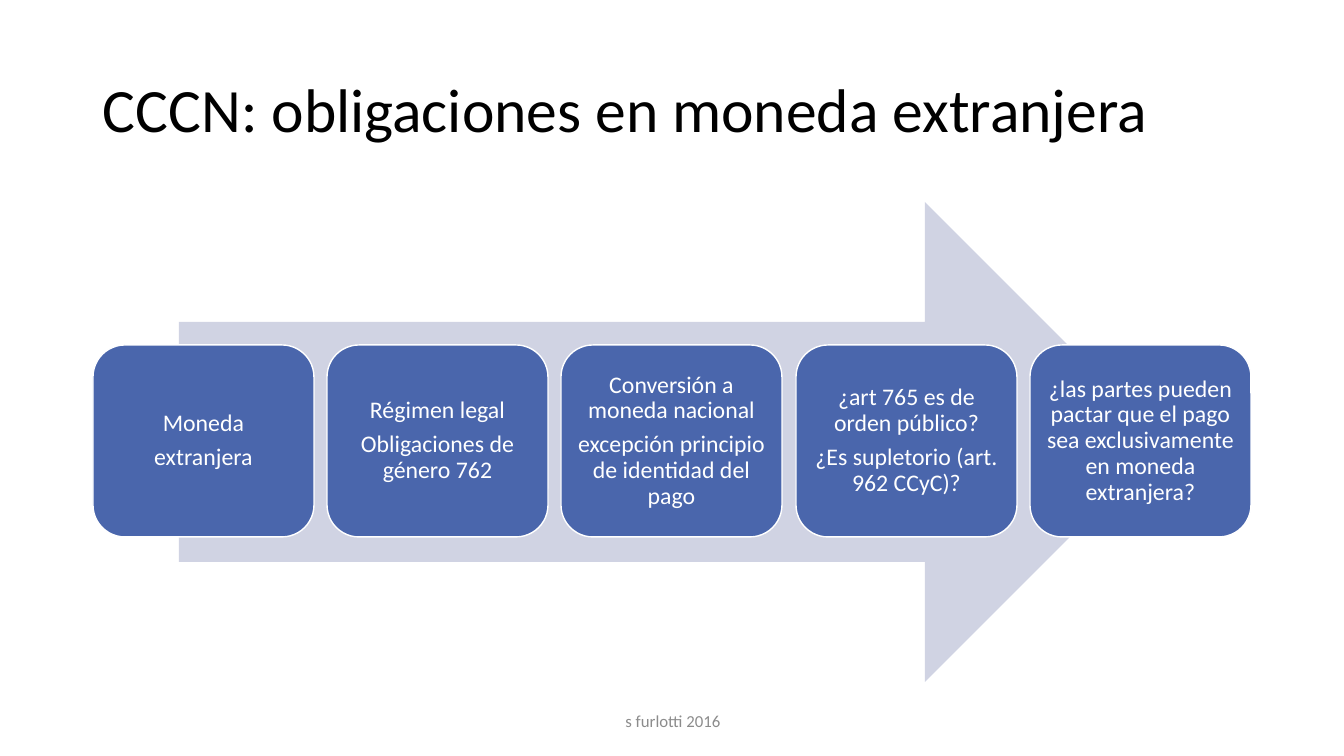
from dataclasses import dataclass

from pptx import Presentation
from pptx.dml.color import RGBColor
from pptx.enum.shapes import MSO_SHAPE as Preset
from pptx.enum.text import MSO_ANCHOR as Anchor, PP_ALIGN as Align
from pptx.shapes.autoshape import Shape
from pptx.slide import Slide
from pptx.util import Pt

EMU_PER_PX = 914400 / 100.8
FONT = "Calibri"
WHITE, BLACK, GREY = "FFFFFF", "000000", "8C8C8C"
BLUE, PALE_BLUE = "4A66AC", "D0D3E3"


@dataclass(frozen=True)
class Area:
    left: int
    top: int
    width: int
    height: int

    def emu(self) -> list[int]:
        return [px(n) for n in (self.left, self.top, self.width, self.height)]


@dataclass(frozen=True)
class TextStyle:
    size: int
    color: str
    align: Align = Align.CENTER
    line_spacing: float = 0.9
    space_after: int = 0
    inset_x: int = 10
    inset_y: int = 5


TITLE_AREA = Area(93, 40, 1159, 146)
ARROW_AREA = Area(179, 202, 986, 480)
STEPS_AREA = Area(93, 345, 1158, 192)
FOOTER_AREA = Area(446, 701, 454, 40)
STEP_WIDTH = 221

TITLE_STYLE = TextStyle(44, BLACK, align=Align.LEFT)
STEP_STYLE = TextStyle(17, WHITE, space_after=6, inset_x=7, inset_y=7)
FOOTER_STYLE = TextStyle(12, GREY, line_spacing=1.0)

STEPS = [
    ["Moneda", "extranjera"],
    ["Régimen legal", "Obligaciones de género 762"],
    ["Conversión a moneda nacional", "excepción principio de identidad del pago"],
    ["¿art 765 es de orden público?", "¿Es supletorio (art. 962 CCyC)?"],
    ["¿las partes pueden pactar que el pago sea exclusivamente en moneda extranjera?"],
]


def px(length: int) -> int:
    return round(length * EMU_PER_PX)


def rgb(color: str) -> RGBColor:
    return RGBColor.from_string(color)


def set_values(target: object, values: dict) -> None:
    for name, value in values.items():
        setattr(target, name, value)


def write(box: Shape, lines: list[str], style: TextStyle) -> None:
    """Fill the box with one paragraph per line."""
    frame = box.text_frame
    set_values(frame, {
        "word_wrap": True,
        "vertical_anchor": Anchor.MIDDLE,
        "margin_left": px(style.inset_x),
        "margin_right": px(style.inset_x),
        "margin_top": px(style.inset_y),
        "margin_bottom": px(style.inset_y),
    })
    for index, line in enumerate(lines):
        para = frame.add_paragraph() if index else frame.paragraphs[0]
        set_values(para, {
            "alignment": style.align,
            "line_spacing": style.line_spacing,
            "space_after": Pt(style.space_after),
        })
        span = para.add_run()
        span.text = line
        set_values(span.font, {"name": FONT, "size": Pt(style.size)})
        span.font.color.rgb = rgb(style.color)


def add_text(page: Slide, area: Area, text: str, style: TextStyle) -> None:
    write(page.shapes.add_textbox(*area.emu()), [text], style)


def add_filled(page: Slide, preset: Preset, area: Area, fill: str) -> Shape:
    shape = page.shapes.add_shape(preset, *area.emu())
    shape.shadow.inherit = False
    shape.fill.solid()
    shape.fill.fore_color.rgb = rgb(fill)
    shape.line.fill.background()
    return shape


def add_steps(page: Slide) -> None:
    """Spread the steps evenly from edge to edge of their area."""
    free_width = STEPS_AREA.width - STEP_WIDTH
    for index, lines in enumerate(STEPS):
        left = STEPS_AREA.left + round(index * free_width / (len(STEPS) - 1))
        area = Area(left, STEPS_AREA.top, STEP_WIDTH, STEPS_AREA.height)
        box = add_filled(page, Preset.ROUNDED_RECTANGLE, area, BLUE)
        box.line.color.rgb = rgb(WHITE)
        box.line.width = Pt(1)
        write(box, lines, STEP_STYLE)


def main() -> None:
    deck = Presentation()
    set_values(deck, {"slide_width": px(1344), "slide_height": px(756)})
    page = deck.slides.add_slide(deck.slide_layouts[6])
    add_text(page, TITLE_AREA, "CCCN: obligaciones en moneda extranjera", TITLE_STYLE)
    add_filled(page, Preset.RIGHT_ARROW, ARROW_AREA, PALE_BLUE)
    add_steps(page)
    add_text(page, FOOTER_AREA, "s furlotti 2016", FOOTER_STYLE)
    deck.save("out.pptx")


if __name__ == "__main__":
    main()
